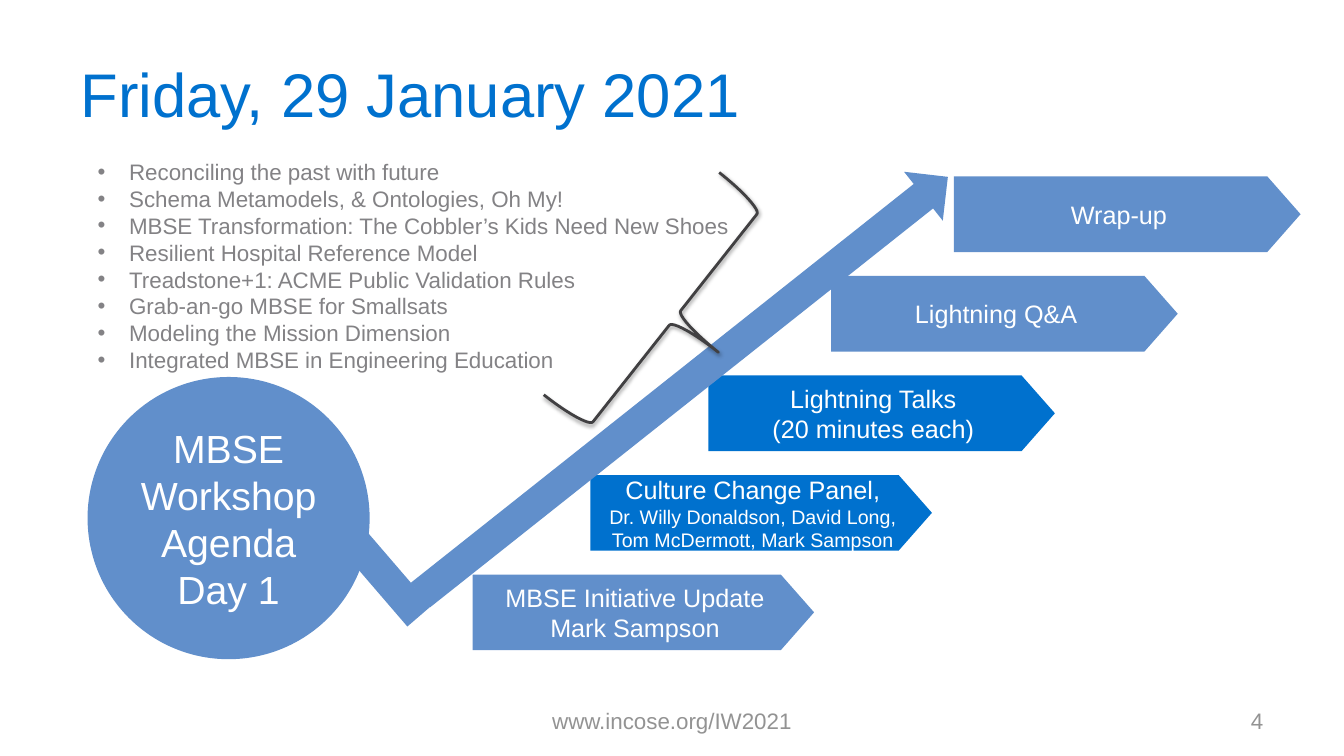
from lxml import etree
from pptx import Presentation
from pptx.dml.color import RGBColor
from pptx.enum.shapes import MSO_SHAPE
from pptx.enum.text import MSO_ANCHOR, MSO_AUTO_SIZE, PP_ALIGN
from pptx.oxml.ns import qn
from pptx.util import Pt

PENTAGON, ARROW, BAR = MSO_SHAPE.PENTAGON, MSO_SHAPE.RIGHT_ARROW, MSO_SHAPE.RECTANGLE
CIRCLE, BRACE = MSO_SHAPE.OVAL, MSO_SHAPE.RIGHT_BRACE
LEFT, CENTER, RIGHT = PP_ALIGN.LEFT, PP_ALIGN.CENTER, PP_ALIGN.RIGHT
TOP, MIDDLE = MSO_ANCHOR.TOP, MSO_ANCHOR.MIDDLE
NO_AUTOFIT = MSO_AUTO_SIZE.NONE

FONT = "Arial"
SOFT_BLUE, BLUE, WHITE = "618FCB", "0071CE", "FFFFFF"
LIST_GRAY, FOOTER_GRAY, BRACE_GRAY = "838285", "939393", "414042"
WIDE_INSETS = (9.4, 5)

TALKS = [
    "Reconciling the past with future",
    "Schema Metamodels, & Ontologies, Oh My!",
    "MBSE Transformation: The Cobbler’s Kids Need New Shoes",
    "Resilient Hospital Reference Model",
    "Treadstone+1: ACME Public Validation Rules",
    "Grab-an-go MBSE for Smallsats",
    "Modeling the Mission Dimension",
    "Integrated MBSE in Engineering Education",
]

SESSIONS = [
    (681.8, 247.7, SOFT_BLUE, ["Wrap-up"], [18]),
    (594, 247.7, SOFT_BLUE, ["Lightning Q&A"], [18]),
    (506.2, 247.7, BLUE, ["Lightning Talks", "(20 minutes each)"], [18, 18]),
    (421.9, 244.1, BLUE, ["Culture Change Panel,",
     "Dr. Willy Donaldson, David Long, Tom McDermott, Mark Sampson"], [18, 14]),
    (337.7, 244.1, SOFT_BLUE, ["MBSE Initiative Update Mark Sampson"], [18]),
]
FIRST_SESSION_TOP, SESSION_STEP, SESSION_HEIGHT = 126, 71.1, 54


def rgb(color):
    """Turn a hex string into a colour."""
    return RGBColor.from_string(color)


def place(item, left, top, width, height):
    """Move and size an item, in points."""
    item.left, item.top, item.width, item.height = map(Pt, (left, top, width, height))


def add_bullet(paragraph, indent):
    """Give a paragraph a round bullet with a hanging indent."""
    properties = paragraph._p.get_or_add_pPr()
    properties.set("marL", str(Pt(indent)))
    properties.set("indent", str(-Pt(indent)))
    etree.SubElement(properties, qn("a:buFont")).set("typeface", FONT)
    etree.SubElement(properties, qn("a:buChar")).set("char", "•")


def write(item, lines, sizes, color, align=LEFT, anchor=MIDDLE, insets=(7.2, 3.6), bullet=0):
    """Fill an item with one formatted paragraph per line."""
    frame = item.text_frame
    frame.word_wrap = True
    frame.auto_size = NO_AUTOFIT
    frame.vertical_anchor = anchor
    frame.margin_left = frame.margin_right = Pt(insets[0])
    frame.margin_top = frame.margin_bottom = Pt(insets[1])
    for index, (line, size) in enumerate(zip(lines, sizes)):
        paragraph = frame.add_paragraph() if index else frame.paragraphs[0]
        paragraph.text = line
        paragraph.alignment = align
        paragraph.space_before = Pt(0)
        if bullet:
            add_bullet(paragraph, bullet)
        font = paragraph.font
        font.name, font.size, font.color.rgb = FONT, Pt(size), rgb(color)


def add_filled(slide, kind, box, color, rotation=0):
    """Add a flat filled shape without an outline."""
    shape = slide.shapes.add_shape(kind, *map(Pt, box))
    shape.shadow.inherit = False
    shape.fill.solid()
    shape.fill.fore_color.rgb = rgb(color)
    shape.line.fill.background()
    shape.rotation = rotation
    return shape


def add_sessions(slide):
    """Add the staircase of session pentagons."""
    for step, (left, width, color, lines, sizes) in enumerate(SESSIONS):
        top = FIRST_SESSION_TOP + step * SESSION_STEP
        pentagon = add_filled(slide, PENTAGON, (left, top, width, SESSION_HEIGHT), color)
        pentagon.adjustments[0] = 0.44
        write(pentagon, lines, sizes, WHITE, align=CENTER)


def add_brace(slide):
    """Add the tilted brace with its soft shadow."""
    brace = slide.shapes.add_shape(BRACE, *map(Pt, (442.8, 126, 79.2, 202.3)))
    brace.rotation = 38.3
    brace.fill.background()
    brace.line.color.rgb = rgb(BRACE_GRAY)
    brace.line.width = Pt(2)
    brace.shadow.inherit = False
    effects = brace._element.spPr.find(qn("a:effectLst"))
    shadow = etree.SubElement(effects, qn("a:outerShdw"), blurRad=str(Pt(3.1)),
                              dist=str(Pt(1.6)), dir="5400000", rotWithShape="0")
    shade = etree.SubElement(shadow, qn("a:srgbClr"), val="000000")
    etree.SubElement(shade, qn("a:alpha"), val="38000")


def add_footer(slide, box, line, align):
    """Add one footer text."""
    footer = slide.shapes.add_textbox(*map(Pt, box))
    write(footer, [line], [16], FOOTER_GRAY, align=align, insets=WIDE_INSETS)


def main():
    """Build the agenda slide."""
    deck = Presentation()
    deck.slide_width, deck.slide_height = Pt(960.5), Pt(540)
    slide = deck.slides.add_slide(deck.slide_layouts[1])
    title, talks = slide.placeholders
    place(title, 48.2, 21.6, 864.7, 90)
    write(title, ["Friday, 29 January 2021"], [44], BLUE, insets=WIDE_INSETS)
    place(talks, 62.6, 109.4, 531.4, 181.4)
    write(talks, TALKS, [16] * len(TALKS), LIST_GRAY, anchor=TOP, bullet=22.5)

    add_sessions(slide)
    add_filled(slide, ARROW, (248.4, 253.4, 481, 44.6), SOFT_BLUE, rotation=321.6)
    add_filled(slide, BAR, (238.3, 401, 74.2, 22.3), SOFT_BLUE, rotation=49.3)
    agenda = add_filled(slide, CIRCLE, (62.6, 269.3, 201.6, 201.6), SOFT_BLUE)
    write(agenda, ["MBSE Workshop Agenda", "Day 1"], [28, 28], WHITE, align=CENTER)
    add_brace(slide)

    add_footer(slide, (328.3, 500.4, 303.8, 28.8), "www.incose.org/IW2021", CENTER)
    add_footer(slide, (688.3, 500.4, 223.9, 28.8), "4", RIGHT)
    deck.save("out.pptx")


if __name__ == "__main__":
    main()
